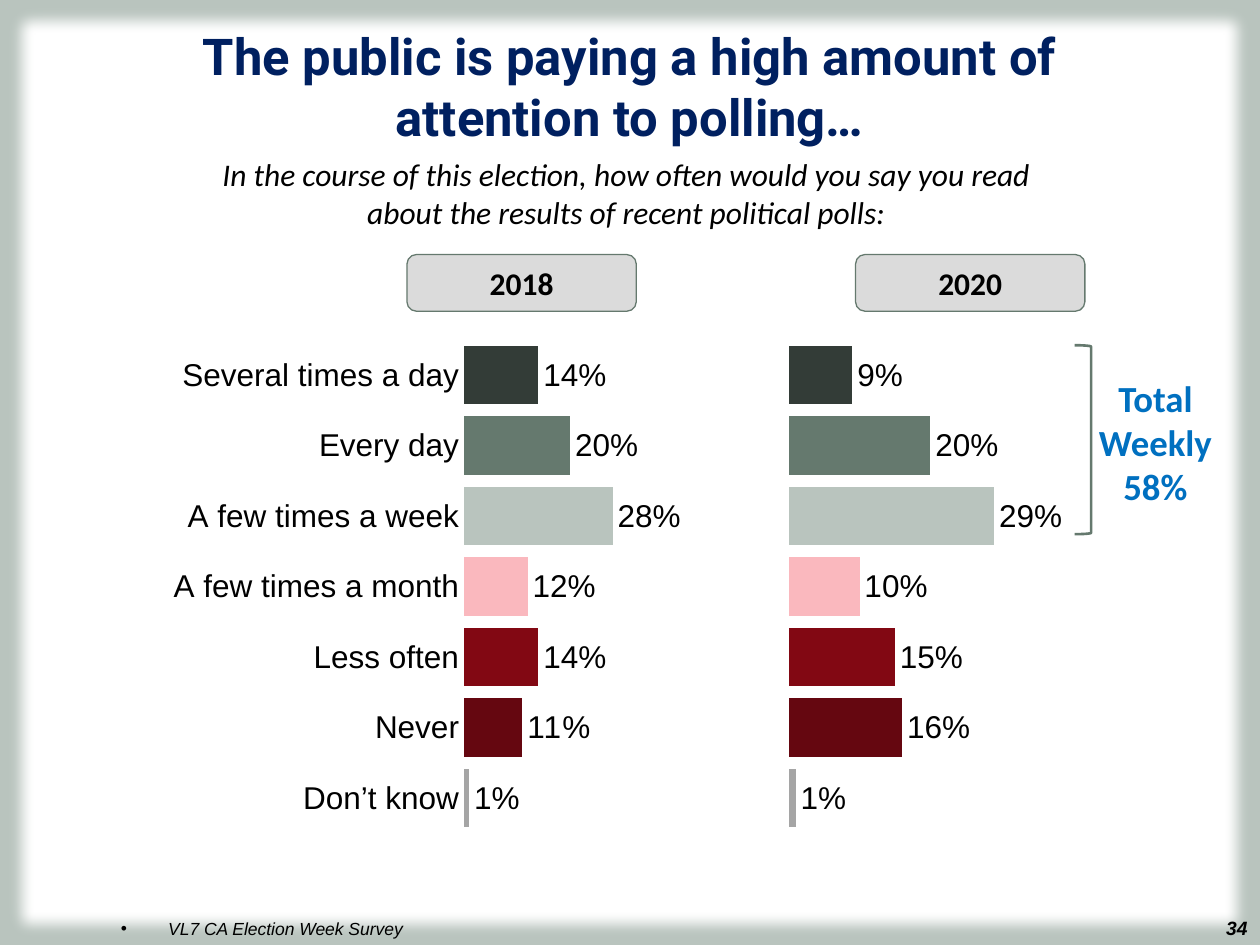
"""Build the slide comparing attention to political polls in 2018 and 2020."""
from dataclasses import dataclass

import pptx
import pptx.chart.data
import pptx.dml.color
import pptx.enum.chart
import pptx.enum.shapes
import pptx.enum.text
import pptx.oxml
import pptx.oxml.ns
import pptx.util

Inches = pptx.util.Inches
Align = pptx.enum.text.PP_ALIGN
Anchor = pptx.enum.text.MSO_ANCHOR
Preset = pptx.enum.shapes.MSO_SHAPE


@dataclass(frozen=True)
class Theme:
    """Colours, type sizes and fonts of the slide."""
    backdrop: str = "B9C4BE"
    panel: str = "FFFFFF"
    panel_edge: str = "4C5B53"
    ink: str = "000000"
    title: str = "002060"
    accent: str = "0070C0"
    badge: str = "DBDBDB"
    outline: str = "65796E"
    bars: tuple[str, ...] = (
        "333C37", "65796E", "B9C4BE", "FAB8BE", "820813", "650710", "A5A5A5")
    title_size: float = 29
    callout_size: float = 21
    text_size: float = 18
    number_size: float = 11
    footer_size: float = 10
    heading_font: str = "Roboto"
    body_font: str = "Calibri"
    chart_font: str = "Arial"


@dataclass(frozen=True)
class Box:
    """A rectangle in inches."""
    left: float
    top: float
    width: float
    height: float

    def lengths(self) -> tuple:
        """Return the four lengths ready for a shape."""
        return tuple(Inches(v) for v in (self.left, self.top, self.width, self.height))


@dataclass(frozen=True)
class Style:
    """The look of a piece of text."""
    size: float
    font: str
    color: str
    bold: bool = False
    italic: bool = False
    align: Align = Align.CENTER


@dataclass(frozen=True)
class Survey:
    """One year of answers with its badge and chart positions."""
    year: str
    badge_left: float
    chart_left: float
    axis_min: float
    show_answers: bool
    shares: tuple[float, ...]


THEME = Theme()
ANSWERS = ("Several times a day", "Every day", "A few times a week",
           "A few times a month", "Less often", "Never", "Don’t know")
SURVEYS = (
    Survey("2018", 3.23, 0, -0.15, True, (0.14, 0.2, 0.28, 0.12, 0.14, 0.11, 0.01)),
    Survey("2020", 6.79, 3.21, 0, False, (0.09, 0.2, 0.29, 0.1, 0.15, 0.16, 0.01)),
)
PLOT_AREA = {"x": 0.505, "y": 0.035, "w": 0.419, "h": 0.879}


def rgb(color: str) -> pptx.dml.color.RGBColor:
    """Turn a hex string into a colour."""
    return pptx.dml.color.RGBColor.from_string(color)


def style_font(font, style: Style) -> None:
    """Apply a style to a font."""
    font.size = pptx.util.Pt(style.size)
    font.name = style.font
    font.bold = style.bold
    font.italic = style.italic
    font.color.rgb = rgb(style.color)


def write(shape, text: str, style: Style, anchor: Anchor = Anchor.TOP) -> None:
    """Fill a shape with styled text."""
    frame = shape.text_frame
    frame.word_wrap = True
    frame.auto_size = pptx.enum.text.MSO_AUTO_SIZE.NONE
    frame.vertical_anchor = anchor
    frame.text = text
    for para in frame.paragraphs:
        para.alignment = style.align
        para.space_before = pptx.util.Pt(0)
        for span in para.runs:
            style_font(span.font, style)


def place(shape, box: Box) -> None:
    """Move and size a placeholder."""
    shape.left, shape.top, shape.width, shape.height = box.lengths()


def add_text(page, box: Box, text: str, style: Style):
    """Add a text box."""
    shape = page.shapes.add_textbox(*box.lengths())
    write(shape, text, style)
    return shape


def add_preset(page, preset: Preset, box: Box, fill: str | None, line: str, weight: float):
    """Add a preset shape without shadow."""
    shape = page.shapes.add_shape(preset, *box.lengths())
    shape.shadow.inherit = False
    if fill:
        shape.fill.solid()
        shape.fill.fore_color.rgb = rgb(fill)
    else:
        shape.fill.background()
    shape.line.color.rgb = rgb(line)
    shape.line.width = pptx.util.Pt(weight)
    return shape


def add_panel(page) -> None:
    """Add the white panel with its soft edge."""
    panel = add_preset(page, Preset.RECTANGLE, Box(0.04, 0.03, 9.92, 7.45),
                       THEME.panel, THEME.panel_edge, 1.5)
    effects = panel.element.spPr.find(pptx.oxml.ns.qn("a:effectLst"))
    effects.append(pptx.oxml.parse_xml(
        f'<a:softEdge {pptx.oxml.ns.nsdecls("a")} rad="{Inches(0.12)}"/>'))


def fix_plot_area(chart) -> None:
    """Set the inner plot area as shares of the chart."""
    area = chart.element.find(".//" + pptx.oxml.ns.qn("c:plotArea"))
    for old in area.findall(pptx.oxml.ns.qn("c:layout")):
        area.remove(old)
    modes = "".join(f'<c:{side}Mode val="edge"/>' for side in "xy")
    sides = "".join(f'<c:{side} val="{share}"/>' for side, share in PLOT_AREA.items())
    area.insert(0, pptx.oxml.parse_xml(
        f'<c:layout {pptx.oxml.ns.nsdecls("c")}><c:manualLayout>'
        f'<c:layoutTarget val="inner"/>{modes}{sides}</c:manualLayout></c:layout>'))


def add_survey(page, survey: Survey) -> None:
    """Add the year badge and bar chart of one survey."""
    badge = add_preset(page, Preset.ROUNDED_RECTANGLE, Box(survey.badge_left, 2.02, 1.82, 0.45),
                       THEME.badge, THEME.outline, 0.75)
    write(badge, survey.year, Style(THEME.text_size, THEME.body_font, THEME.ink, bold=True),
          Anchor.MIDDLE)

    data = pptx.chart.data.CategoryChartData(number_format="0%")
    data.categories = ANSWERS if survey.show_answers else [
        str(rank) for rank in range(1, len(ANSWERS) + 1)]
    data.add_series("Series 1", survey.shares)
    chart = page.shapes.add_chart(
        pptx.enum.chart.XL_CHART_TYPE.BAR_CLUSTERED,
        *Box(survey.chart_left, 2.54, 6.04, 4.46).lengths(), data).chart
    chart.has_legend = False
    chart.has_title = False
    style = Style(THEME.text_size, THEME.chart_font, THEME.ink)
    style_font(chart.font, style)
    fix_plot_area(chart)

    answers = chart.category_axis
    answers.reverse_order = True
    answers.visible = survey.show_answers
    answers.major_tick_mark = pptx.enum.chart.XL_TICK_MARK.NONE
    answers.format.line.fill.background()
    style_font(answers.tick_labels.font, style)

    scale = chart.value_axis
    scale.visible = False
    scale.has_major_gridlines = False
    scale.minimum_scale = survey.axis_min
    scale.maximum_scale = 0.45
    scale.major_unit = 0.15

    plot = chart.plots[0]
    plot.gap_width = 21
    plot.vary_by_categories = False
    plot.has_data_labels = True
    labels = plot.data_labels
    labels.show_value = True
    labels.number_format = "0%"
    labels.number_format_is_linked = False
    labels.position = pptx.enum.chart.XL_LABEL_POSITION.OUTSIDE_END
    style_font(labels.font, style)
    series = plot.series[0]
    for fill, color in [(series.format.fill, THEME.outline)] + [
            (series.points[i].format.fill, color) for i, color in enumerate(THEME.bars)]:
        fill.solid()
        fill.fore_color.rgb = rgb(color)


def add_footer(page, body) -> None:
    """Write the survey name and the page number."""
    place(body, Box(0.86, 6.9, 8.89, 0.6))
    props = body.text_frame.paragraphs[0]._p.get_or_add_pPr()
    props.set("marL", "0")
    props.set("indent", "0")
    props.append(pptx.oxml.parse_xml(f'<a:buNone {pptx.oxml.ns.nsdecls("a")}/>'))
    write(body, "VL7 CA Election Week Survey",
          Style(THEME.footer_size, THEME.chart_font, THEME.ink, italic=True, align=Align.LEFT),
          Anchor.BOTTOM)
    add_text(page, Box(8.73, 7.22, 1.27, 0.28), "34",
             Style(THEME.number_size, THEME.chart_font, THEME.ink, True, True, Align.RIGHT))


def main() -> None:
    """Build and save the deck."""
    deck = pptx.Presentation()
    deck.slide_width, deck.slide_height = Inches(10), Inches(7.5)
    page = deck.slides.add_slide(deck.slide_layouts[1])
    page.background.fill.solid()
    page.background.fill.fore_color.rgb = rgb(THEME.backdrop)
    title, body = page.placeholders
    add_panel(page)
    for holder in (title, body):
        page.shapes.element.append(holder.element)

    place(title, Box(0.86, 0.15, 8.28, 1.25))
    write(title, "The public is paying a high amount of attention to polling…",
          Style(THEME.title_size, THEME.heading_font, THEME.title, bold=True))
    add_footer(page, body)
    add_text(page, Box(0, 1.18, 10, 0.71),
             "In the course of this election, how often would you say you read \v"
             "about the results of recent political polls: ",
             Style(THEME.text_size, THEME.body_font, THEME.ink, italic=True))
    for survey in SURVEYS:
        add_survey(page, survey)
    add_preset(page, Preset.RIGHT_BRACKET, Box(8.53, 2.74, 0.13, 1.5), None, THEME.outline, 1.5)
    callout = add_text(page, Box(8.31, 2.93, 1.72, 1.16), "Total Weekly\v58%",
                       Style(THEME.callout_size, THEME.body_font, THEME.accent, bold=True))
    callout.text_frame.margin_left = callout.text_frame.margin_right = Inches(0.2)
    deck.save("out.pptx")


if __name__ == "__main__":
    main()
